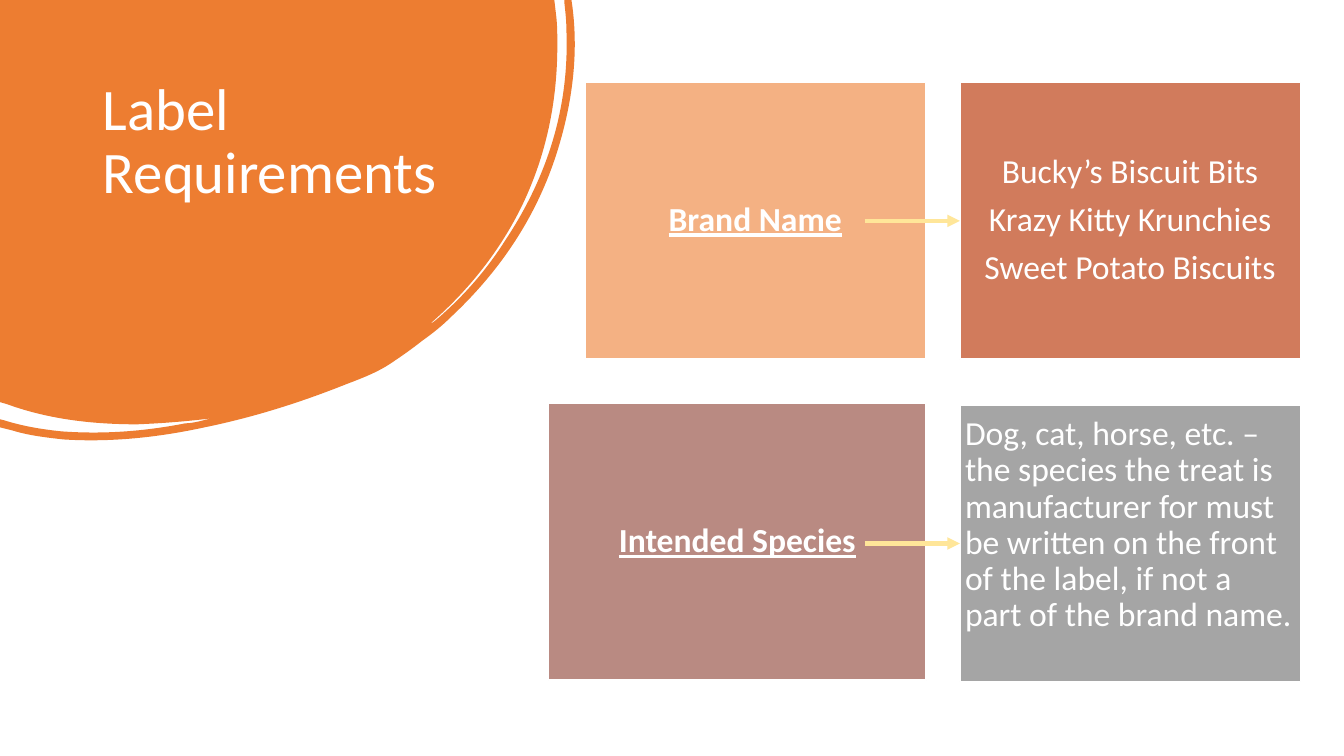
from dataclasses import dataclass

from lxml import etree
from pptx import Presentation
from pptx.dml.color import RGBColor
from pptx.enum.shapes import MSO_CONNECTOR, MSO_SHAPE
from pptx.enum.text import MSO_ANCHOR, MSO_AUTO_SIZE, PP_ALIGN
from pptx.oxml.ns import qn
from pptx.shapes.autoshape import Shape
from pptx.slide import Slide
from pptx.util import Cm, Pt

RECTANGLE = MSO_SHAPE.RECTANGLE
STRAIGHT = MSO_CONNECTOR.STRAIGHT
TOP, MIDDLE = MSO_ANCHOR.TOP, MSO_ANCHOR.MIDDLE
LEFT, CENTER = PP_ALIGN.LEFT, PP_ALIGN.CENTER
NO_AUTOFIT = MSO_AUTO_SIZE.NONE
LEFT_SIDE = 1


@dataclass(frozen=True)
class Theme:
    font: str = "Calibri"
    title_size: float = 42
    box_size: float = 24
    line_spacing: float = 0.9
    space_after: float = 8.4
    white: str = "FFFFFF"
    orange: str = "ED7D31"
    peach: str = "F4B183"
    terracotta: str = "D17B5C"
    rose: str = "B98A82"
    grey: str = "A5A5A5"
    arrow: str = "FFE699"


THEME = Theme()


@dataclass(frozen=True)
class Box:
    """A filled box; lengths in centimetres."""
    left: float
    top: float
    width: float
    fill: str
    lines: tuple[str, ...]
    heading: bool = False
    align: PP_ALIGN = CENTER
    bottom_inset: float = 0.13


@dataclass(frozen=True)
class Requirement:
    label: Box
    detail: Box


BOX_HEIGHT = 6.97
DETAIL_LEFT, DETAIL_WIDTH = 24.19, 8.58
ARROW_LEFT = 21.79

REQUIREMENTS = (
    Requirement(
        Box(14.74, 2.08, 8.59, THEME.peach, ("Brand Name",), heading=True),
        Box(DETAIL_LEFT, 2.08, DETAIL_WIDTH, THEME.terracotta,
            ("Bucky’s Biscuit Bits", "Krazy Kitty Krunchies", "Sweet Potato Biscuits")),
    ),
    Requirement(
        Box(13.82, 10.17, 9.52, THEME.rose, ("Intended Species",), heading=True),
        Box(DETAIL_LEFT, 10.21, DETAIL_WIDTH, THEME.grey,
            ("Dog, cat, horse, etc. – the species the treat is manufacturer for must be "
             "written on the front of the label, if not a part of the brand name.",),
            align=LEFT, bottom_inset=1.04),
    ),
)

# Blob outline in units of 2.54 cm: two numbers make a line, six make a Bézier curve
BLOB_UNIT = 2.54
BLOB_GRID = 1000
BLOB_SIZE = (5.71, 4.37)
BLOB_OUTLINE = (
    (0, 0), (5.5, 0), (5.52, 0.17),
    (5.53, 0.26, 5.53, 0.36, 5.53, 0.45),
    (5.53, 1.01, 5.42, 1.54, 5.18, 2.04),
    (4.96, 2.49, 4.65, 2.88, 4.27, 3.21),
    (4.29, 3.21, 4.3, 3.19, 4.32, 3.18),
    (4.59, 2.95, 4.82, 2.69, 5.01, 2.39),
    (5.43, 1.76, 5.65, 1.07, 5.62, 0.3),
    (5.62, 0.21, 5.61, 0.12, 5.6, 0.03),
    (5.6, 0), (5.67, 0), (5.68, 0.07),
    (5.74, 0.54, 5.68, 1.02, 5.53, 1.5),
    (5.33, 2.14, 4.97, 2.68, 4.48, 3.14),
    (4.39, 3.23, 4.29, 3.31, 4.19, 3.38),
    (4.09, 3.46, 3.99, 3.53, 3.87, 3.61),
    (3.75, 3.69, 3.6, 3.75, 3.44, 3.81),
    (2.99, 3.99, 2.52, 4.14, 2.03, 4.24),
    (1.57, 4.34, 1.1, 4.39, 0.63, 4.36),
    (0.45, 4.34, 0.28, 4.32, 0.12, 4.27),
    (0, 4.24), (0, 4.16), (0.04, 4.17),
    (0.23, 4.23, 0.42, 4.26, 0.61, 4.28),
    (1.03, 4.31, 1.43, 4.28, 1.84, 4.2),
    (1.89, 4.2, 1.93, 4.19, 1.98, 4.18),
    (2.02, 4.17, 2.06, 4.16, 2.1, 4.15),
    (1.86, 4.18, 1.61, 4.2, 1.36, 4.21),
    (0.92, 4.21, 0.48, 4.16, 0.07, 4.01),
    (0, 3.99),
)


def curve_segments(blob: Shape) -> None:
    """Give the blob its full size and turn its curved segments into Béziers."""
    blob.width, blob.height = (Cm(BLOB_UNIT * side) for side in BLOB_SIZE)
    outline = next(blob._element.iter(qn("a:path")))
    for name, side in zip("wh", BLOB_SIZE):
        outline.set(name, str(round(side * BLOB_GRID)))
    for element, segment in zip(list(outline), BLOB_OUTLINE):
        if len(segment) == 6:
            curve = etree.Element(qn("a:cubicBezTo"))
            for x, y in zip(segment[::2], segment[1::2]):
                etree.SubElement(curve, qn("a:pt"),
                                 x=str(round(x * BLOB_GRID)), y=str(round(y * BLOB_GRID)))
            outline.replace(element, curve)


def draw_blob(slide: Slide) -> Shape:
    points = [(segment[-2] * BLOB_GRID, segment[-1] * BLOB_GRID) for segment in BLOB_OUTLINE]
    builder = slide.shapes.build_freeform(*points[0], scale=Cm(BLOB_UNIT) / BLOB_GRID)
    builder.add_line_segments(points[1:], close=True)
    blob = builder.convert_to_shape()
    curve_segments(blob)
    blob.shadow.inherit = False
    blob.fill.solid()
    blob.fill.fore_color.rgb = RGBColor.from_string(THEME.orange)
    blob.line.fill.background()
    return blob


def write_lines(shape: Shape, lines: tuple[str, ...], size: float,
                align: PP_ALIGN, anchor: MSO_ANCHOR) -> None:
    frame = shape.text_frame
    frame.word_wrap = True
    frame.auto_size = NO_AUTOFIT
    frame.vertical_anchor = anchor
    frame.text = "\n".join(lines)
    for para in frame.paragraphs:
        para.alignment = align
        para.line_spacing = THEME.line_spacing
        para.font.name = THEME.font
        para.font.size = Pt(size)
        para.font.color.rgb = RGBColor.from_string(THEME.white)


def draw_box(slide: Slide, box: Box) -> Shape:
    shape = slide.shapes.add_shape(
        RECTANGLE, Cm(box.left), Cm(box.top), Cm(box.width), Cm(BOX_HEIGHT))
    shape.shadow.inherit = False
    shape.fill.solid()
    shape.fill.fore_color.rgb = RGBColor.from_string(box.fill)
    shape.line.color.rgb = RGBColor.from_string(THEME.white)
    shape.line.width = Pt(1)
    write_lines(shape, box.lines, THEME.box_size, box.align, MIDDLE)
    frame = shape.text_frame
    frame.margin_left = frame.margin_right = frame.margin_top = Cm(0.13)
    frame.margin_bottom = Cm(box.bottom_inset)
    for para in frame.paragraphs:
        para.space_after = Pt(THEME.space_after)
        if box.heading:
            para.font.bold = True
            para.font.underline = True
    return shape


def draw_arrow(slide: Slide, target: Shape) -> None:
    middle = target.top + target.height // 2
    arrow = slide.shapes.add_connector(STRAIGHT, Cm(ARROW_LEFT), middle, target.left, middle)
    arrow.end_connect(target, LEFT_SIDE)
    arrow.line.color.rgb = RGBColor.from_string(THEME.arrow)
    arrow.line.width = Pt(3)
    etree.SubElement(arrow.line._get_or_add_ln(), qn("a:tailEnd"), type="triangle")
    etree.SubElement(arrow._element.spPr, qn("a:effectLst"))


def main() -> None:
    deck = Presentation()
    deck.slide_width, deck.slide_height = Cm(33.87), Cm(19.05)
    page = deck.slides.add_slide(deck.slide_layouts[5])

    # Title on the orange blob
    title = page.shapes.title
    title.left, title.top, title.width, title.height = Cm(2.34), Cm(1.88), Cm(8.94), Cm(5.64)
    write_lines(title, ("Label Requirements",), THEME.title_size, LEFT, TOP)
    title._element.addprevious(draw_blob(page)._element)

    # Requirement boxes, then the arrows over them
    details = []
    for requirement in REQUIREMENTS:
        draw_box(page, requirement.label)
        details.append(draw_box(page, requirement.detail))
    for detail in details:
        draw_arrow(page, detail)

    deck.save("out.pptx")


if __name__ == "__main__":
    main()
